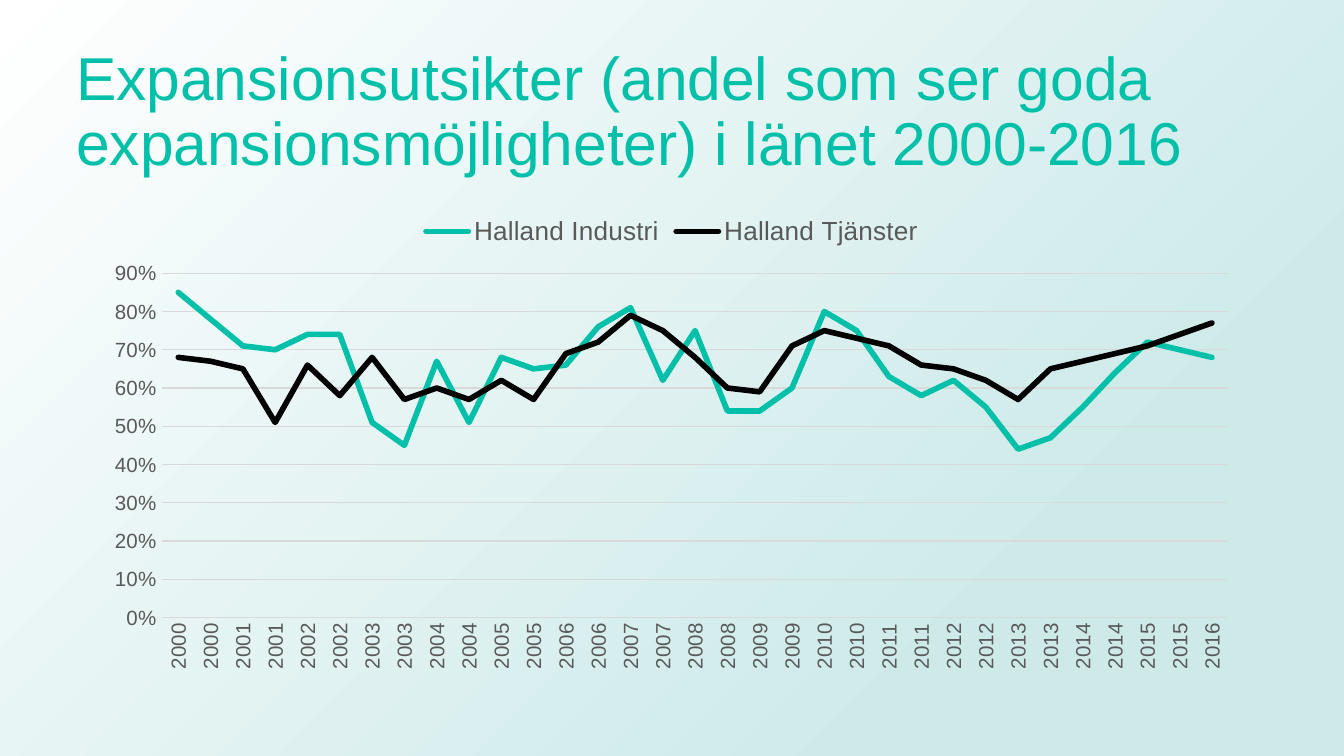
from dataclasses import dataclass

from lxml.etree import SubElement
from pptx import Presentation
from pptx.chart.data import CategoryChartData as ChartData
from pptx.dml.color import RGBColor as Color
from pptx.enum.chart import XL_CHART_TYPE as ChartType, XL_LEGEND_POSITION as LegendPosition
from pptx.enum.chart import XL_TICK_MARK as TickMark
from pptx.enum.shapes import MSO_SHAPE as ShapeType
from pptx.enum.text import MSO_ANCHOR as Anchor
from pptx.oxml import parse_xml
from pptx.oxml.ns import nsdecls, qn
from pptx.util import Cm, Pt

TITLE = "Expansionsutsikter (andel som ser goda expansionsmöjligheter) i länet 2000-2016"
FIRST_YEAR = 2000
SURVEYS_PER_YEAR = 2
SERIES = {
    "Halland Industri": [
        85, 78, 71, 70, 74, 74, 51, 45, 67, 51, 68, 65, 66, 76, 81, 62, 75,
        54, 54, 60, 80, 75, 63, 58, 62, 55, 44, 47, 55, 64, 72, 70, 68],
    "Halland Tjänster": [
        68, 67, 65, 51, 66, 58, 68, 57, 60, 57, 62, 57, 69, 72, 79, 75, 68,
        60, 59, 71, 75, 73, 71, 66, 65, 62, 57, 65, 67, 69, 71, 74, 77],
}
PLOT_LAYOUT = {"x": 0.06, "y": 0.15, "w": 0.92, "h": 0.72}


@dataclass(frozen=True)
class Theme:
    font: str = "Arial"
    accent: str = "00C0A9"
    dark: str = "000000"
    label: str = "595959"
    grid: str = "D9D9D9"
    tint: str = "CDEAE9"
    paper: str = "FFFFFF"
    title_size: float = 32.4
    legend_size: int = 14
    axis_size: int = 11
    series_width: int = 3
    grid_width: float = 0.75


THEME = Theme()


def style_font(font, size, color):
    font.name = THEME.font
    font.size = Pt(size)
    font.color.rgb = Color.from_string(color)


def style_line(line, width, color):
    line.width = Pt(width)
    line.color.rgb = Color.from_string(color)


def add_backdrop(slide, width, height):
    shape = slide.shapes.add_shape(ShapeType.RECTANGLE, 0, 0, width, height)
    shape.shadow.inherit = False
    shape.line.fill.background()
    properties = shape._element.spPr
    gradient = parse_xml(
        f'<a:gradFill {nsdecls("a")} rotWithShape="1"><a:gsLst>'
        f'<a:gs pos="23000"><a:srgbClr val="{THEME.tint}"/></a:gs>'
        f'<a:gs pos="100000"><a:srgbClr val="{THEME.paper}"/></a:gs></a:gsLst>'
        '<a:path path="circle"><a:fillToRect l="100000" t="100000"/></a:path>'
        '<a:tileRect r="-100000" b="-100000"/></a:gradFill>')
    properties.find(qn("a:prstGeom")).addnext(gradient)


def add_title(slide):
    shape = slide.shapes.add_textbox(Cm(1.19), Cm(0.76), Cm(22.5), Cm(2.77))
    frame = shape.text_frame
    frame.word_wrap = True
    frame.vertical_anchor = Anchor.MIDDLE
    paragraph = frame.paragraphs[0]
    paragraph.text = TITLE
    paragraph.line_spacing = 0.9
    style_font(paragraph.font, THEME.title_size, THEME.accent)


def set_plot_layout(chart):
    plot_area = chart._chartSpace.chart.plotArea
    for old_layout in plot_area.findall(qn("c:layout")):
        plot_area.remove(old_layout)
    layout = parse_xml(f'<c:layout {nsdecls("c")}><c:manualLayout/></c:layout>')
    settings = {"layoutTarget": "inner", "xMode": "edge", "yMode": "edge", **PLOT_LAYOUT}
    for name, value in settings.items():
        SubElement(layout[0], qn(f"c:{name}")).set("val", str(value))
    plot_area.insert(0, layout)


def show_every_label_upright(axis):
    element = axis._element
    body = element.find(qn("c:txPr")).find(qn("a:bodyPr"))
    body.set("rot", "-5400000")
    body.set("vert", "horz")
    skip = parse_xml(f'<c:tickLblSkip {nsdecls("c")} val="1"/>')
    element.find(qn("c:noMultiLvlLbl")).addprevious(skip)


def add_chart(slide):
    count = len(next(iter(SERIES.values())))
    data = ChartData(number_format="0%")
    data.categories = [str(FIRST_YEAR + index // SURVEYS_PER_YEAR) for index in range(count)]
    for name, percentages in SERIES.items():
        data.add_series(name, [value / 100 for value in percentages])
    chart = slide.shapes.add_chart(
        ChartType.LINE, Cm(1.75), Cm(3.81), Cm(21.9), Cm(9.04), data).chart
    style_font(chart.font, THEME.axis_size, THEME.label)
    chart.has_title = False
    chart.has_legend = True
    chart.legend.position = LegendPosition.TOP
    chart.legend.include_in_layout = False
    style_font(chart.legend.font, THEME.legend_size, THEME.label)
    chart.plots[0].vary_by_categories = False
    for series, color in zip(chart.plots[0].series, (THEME.accent, THEME.dark)):
        series.smooth = False
        style_line(series.format.line, THEME.series_width, color)
        series.format.line._get_or_add_ln().set("cap", "rnd")

    category_axis, value_axis = chart.category_axis, chart.value_axis
    for axis in (category_axis, value_axis):
        axis.major_tick_mark = axis.minor_tick_mark = TickMark.NONE
        style_font(axis.tick_labels.font, THEME.axis_size, THEME.label)
    style_line(category_axis.format.line, THEME.grid_width, THEME.grid)
    show_every_label_upright(category_axis)
    value_axis.minimum_scale, value_axis.maximum_scale = 0, 0.9
    value_axis.major_unit = 0.1
    value_axis.tick_labels.number_format = "0%"
    value_axis.tick_labels.number_format_is_linked = False
    value_axis.format.line.fill.background()
    style_line(value_axis.major_gridlines.format.line, THEME.grid_width, THEME.grid)
    set_plot_layout(chart)


def main():
    presentation = Presentation()
    presentation.slide_width, presentation.slide_height = Cm(25.4), Cm(14.29)
    slide = presentation.slides.add_slide(presentation.slide_layouts[6])
    add_backdrop(slide, presentation.slide_width, presentation.slide_height)
    add_title(slide)
    add_chart(slide)
    presentation.save("out.pptx")


if __name__ == "__main__":
    main()
